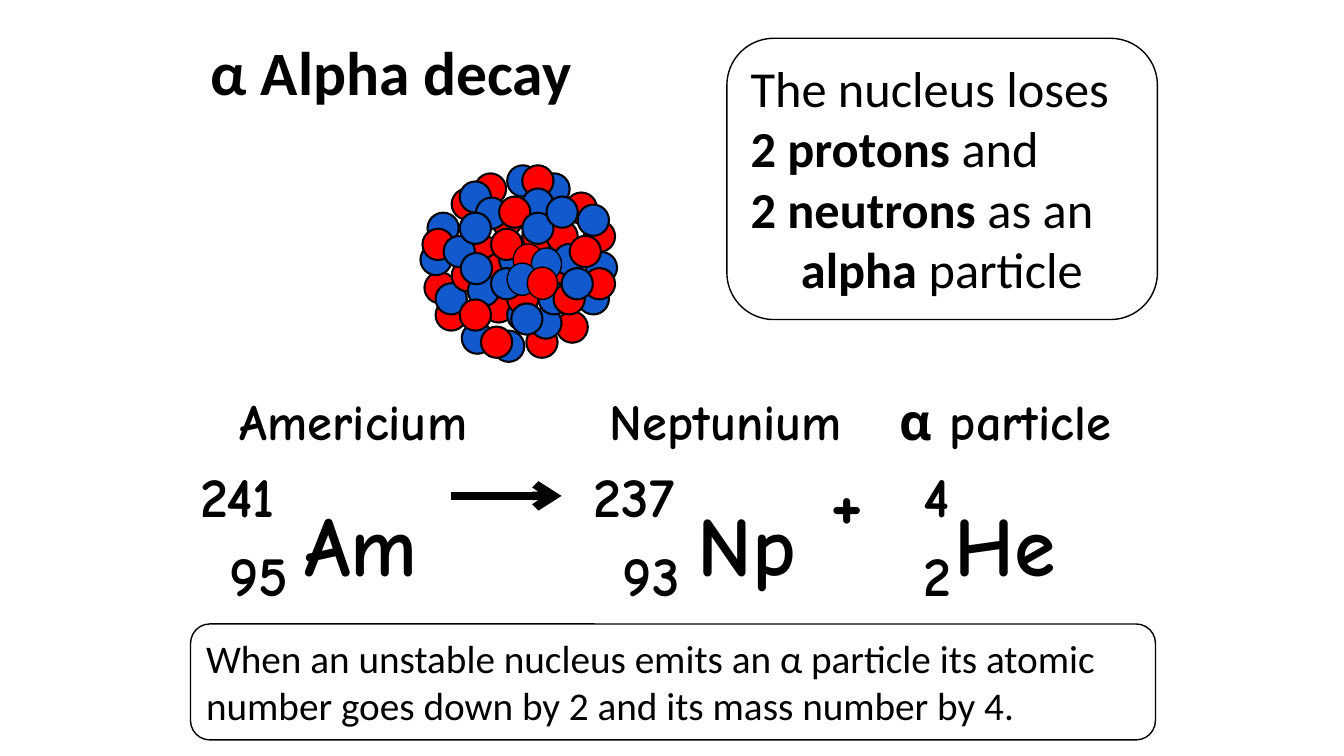
from dataclasses import dataclass
from lxml import etree
from pptx import Presentation
from pptx import util as u
from pptx.dml import color
from pptx.enum import shapes, text
from pptx.oxml import ns

COLORS = {"ink": "000000", "paper": "FFFFFF", "proton": "FF0000", "neutron": "1159CD"}
BODY_FONT, ATOM_FONT = "Calibri", "Comic Neue"

Spot = tuple[float, float]
Runs = list[tuple[str, bool]]


@dataclass
class Label:
    words: str
    x: float
    y: float
    w: float
    h: float
    size: int
    font: str = ATOM_FONT


@dataclass
class Isotope:
    name: str
    mass: str
    number: str
    symbol: str
    x: float
    name_dx: float
    number_dx: float
    symbol_dx: float
    name_w: float
    mass_w: float
    number_w: float
    symbol_w: float

    def labels(self) -> list[Label]:
        return [
            Label(self.symbol, self.x + self.symbol_dx, 4.84, self.symbol_w, 1.11, 60),
            Label(self.mass, self.x, 4.53, self.mass_w, 0.77, 40),
            Label(self.number, self.x + self.number_dx, 5.31, self.number_w, 0.77, 40),
            Label(self.name, self.x + self.name_dx, 3.82, self.name_w, 0.71, 36),
        ]


@dataclass
class Panel:
    lines: list[Runs]
    x: float
    y: float
    w: float
    h: float
    size: int


@dataclass
class Layer:
    kind: str
    spots: list[Spot]
    w: float = 0.31
    h: float = 0.31
    line: float = 1.5


ISOTOPES = [
    Isotope("Americium", "241", "95", "Am", 1.89, 0.39, 0.29, 1.03, 2.69, 1.23, 0.89, 1.47),
    Isotope("Neptunium", "237", "93", "Np", 5.79, 0.16, 0.29, 1.03, 2.73, 1.23, 0.89, 1.34),
    Isotope("α particle", "4", "2", "He", 9.06, -0.24, 0, 0.31, 2.55, 0.54, 0.54, 1.31),
]

PLUS = Label("+", 8.14, 4.45, 0.66, 1.01, 54)
TITLE = Label("α Alpha decay", 1.99, 0.29, 4.4, 0.84, 44, BODY_FONT)

PANELS = [
    Panel([
        [("The nucleus loses", False)],
        [("2 protons ", True), ("and", False)],
        [("2 neutrons ", True), ("as an", False)],
        [("\t", False), ("alpha", True), (" particle", False)],
    ], 7.21, 0.38, 4.27, 2.79, 36),
    Panel([[("When an unstable nucleus emits an α particle its atomic "
             "number goes down by 2 and its mass number by 4.", False)]],
          1.89, 6.19, 9.57, 1.15, 28),
]

NUCLEUS = [
    Layer("proton", [
        (4.64, 2.34), (4.32, 2.97), (4.87, 2.03), (5.79, 2.19), (5.1, 2.34), (5.1, 2.58),
        (4.21, 2.7), (4.71, 1.72), (5.22, 3.24), (4.48, 1.87), (5.52, 3.09), (5.61, 1.91)]),
    Layer("neutron", [
        (4.17, 2.42), (4.58, 3.2), (5.73, 2.81), (4.89, 3.28),
        (5.81, 2.5), (5.34, 1.72), (5.03, 1.64), (4.24, 2.11)]),
    Layer("proton", [(5.18, 1.64), (5.79, 2.66), (4.77, 3.24), (4.19, 2.27)]),
    Layer("neutron", [(5.73, 2.03), (4.56, 1.8), (4.32, 2.81), (5.26, 3.05)]),
    Layer("proton", [
        (4.8, 2.51), (4.79, 2.89), (4.48, 2.58), (5.18, 2.19), (5.42, 2.5), (5.42, 2.19)]),
    Layer("neutron", [(4.72, 1.96), (5.18, 1.87), (4.64, 2.73), (4.4, 2.34), (5.03, 2.97)]),
    Layer("proton", [(5.03, 2.81), (4.95, 1.95)]),
    Layer("neutron", [
        (4.57, 2.51), (5.34, 2.81), (5.18, 2.11), (5.07, 3.01),
        (4.56, 2.11), (4.95, 2.42), (5.49, 2.42)]),
    Layer("proton", [(4.56, 2.97), (4.87, 2.27)]),
    Layer("neutron", [(4.87, 2.66), (5.42, 1.95)]),
    Layer("proton", [(5.18, 2.5), (5.49, 2.81)]),
    Layer("neutron", [(5.57, 2.66)]),
    Layer("proton", [(5.65, 2.34)]),
    Layer("proton", [(5.09, 2.42)], 0.3, 0.32, 1),
    Layer("neutron", [(5.27, 2.46), (5.03, 2.61)], 0.3, 0.32, 1),
    Layer("proton", [(5.23, 2.65)], 0.3, 0.32, 1),
]


def rgb(name: str) -> color.RGBColor:
    return color.RGBColor.from_string(COLORS[name])


def set_font(p, font: str, size: int) -> None:
    p.font.name = font
    p.font.size = u.Pt(size)
    p.font.color.rgb = rgb("ink")


def add_label(s, label: Label) -> None:
    sp = s.shapes.add_textbox(*map(u.Inches, (label.x, label.y, label.w, label.h)))
    tf = sp.text_frame
    tf.word_wrap = False
    tf.auto_size = text.MSO_AUTO_SIZE.SHAPE_TO_FIT_TEXT
    p = tf.paragraphs[0]
    p.text = label.words
    set_font(p, label.font, label.size)
    p.font.bold = True


def add_outlined(s, kind, x: float, y: float, w: float, h: float, fill: str, line: float):
    sp = s.shapes.add_shape(kind, *map(u.Inches, (x, y, w, h)))
    sp.shadow.inherit = False
    sp.fill.solid()
    sp.fill.fore_color.rgb = rgb(fill)
    sp.line.color.rgb = rgb("ink")
    sp.line.width = u.Pt(line)
    return sp


def add_panel(s, panel: Panel) -> None:
    sp = add_outlined(s, shapes.MSO_SHAPE.ROUNDED_RECTANGLE,
                      panel.x, panel.y, panel.w, panel.h, "paper", 1)
    tf = sp.text_frame
    tf.word_wrap = True
    tf.auto_size = text.MSO_AUTO_SIZE.SHAPE_TO_FIT_TEXT
    tf.vertical_anchor = text.MSO_ANCHOR.TOP
    for i, runs in enumerate(panel.lines):
        p = tf.add_paragraph() if i else tf.paragraphs[0]
        p.alignment = text.PP_ALIGN.LEFT
        set_font(p, BODY_FONT, panel.size)
        for words, bold in runs:
            r = p.add_run()
            r.text = words
            r.font.bold = bold


def add_layer(s, layer: Layer) -> None:
    for x, y in layer.spots:
        add_outlined(s, shapes.MSO_SHAPE.OVAL, x, y, layer.w, layer.h, layer.kind, layer.line)


def add_arrow(s, x1: float, x2: float, y: float) -> None:
    cx = s.shapes.add_connector(shapes.MSO_CONNECTOR.STRAIGHT, *map(u.Inches, (x1, y, x2, y)))
    cx.line.color.rgb = rgb("ink")
    cx.line.width = u.Pt(6)
    etree.SubElement(cx.line._get_or_add_ln(), ns.qn("a:tailEnd"), type="arrow")
    etree.SubElement(cx._element.spPr, ns.qn("a:effectLst"))


def main() -> None:
    prs = Presentation()
    prs.slide_width, prs.slide_height = u.Inches(13.33), u.Inches(7.5)
    s = prs.slides.add_slide(prs.slide_layouts[6])
    for isotope in ISOTOPES:
        for label in isotope.labels():
            add_label(s, label)
    add_arrow(s, 4.47, 5.57, 4.92)
    for layer in NUCLEUS:
        add_layer(s, layer)
    for label in (PLUS, TITLE):
        add_label(s, label)
    for panel in PANELS:
        add_panel(s, panel)
    prs.save("out.pptx")


if __name__ == "__main__":
    main()
